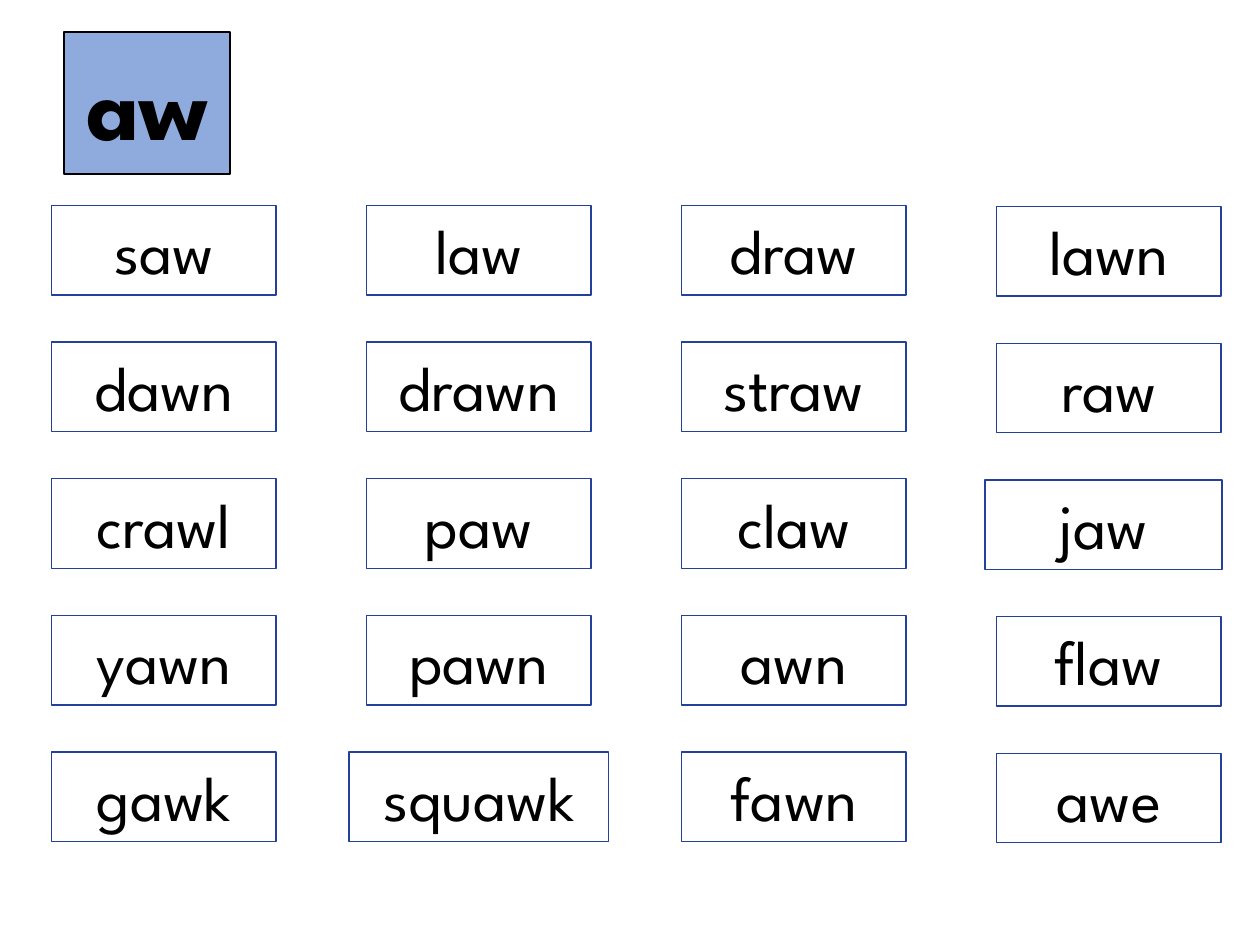
from pptx import Presentation
from pptx.dml.color import RGBColor
from pptx.enum.text import MSO_ANCHOR, MSO_AUTO_SIZE, PP_ALIGN
from pptx.util import Pt

CENTER = PP_ALIGN.CENTER
TOP, MIDDLE = MSO_ANCHOR.TOP, MSO_ANCHOR.MIDDLE
GROW, FIXED = MSO_AUTO_SIZE.SHAPE_TO_FIT_TEXT, MSO_AUTO_SIZE.NONE
TITLE_ONLY = 5


class Theme:
    ink = RGBColor(0x00, 0x00, 0x00)
    blue = RGBColor(0x22, 0x40, 0x9C)
    tile = RGBColor(0x8F, 0xAA, 0xDC)
    word = {"name": "League Spartan", "size": Pt(36), "bold": False}
    head = {"name": "League Spartan", "size": Pt(54), "bold": True}


# One tuple per column, read downwards
WORDS = [
    ("saw", "dawn", "crawl", "yawn", "gawk"),
    ("law", "drawn", "paw", "pawn", "squawk"),
    ("draw", "straw", "claw", "awn", "fawn"),
    ("lawn", "raw", "jaw", "flaw", "awe"),
]
# Wider cards: extra width, and the share of it that goes to the left
WIDE = {"squawk": (20.16, 0.5), "jaw": (7.2, 0.93)}
DROP = 0.72  # the last column sits slightly lower


def set_all(item, values):
    for key, value in values.items():
        setattr(item, key, value)


def write(shape, text, font, line, width, frame):
    """Outline a shape and set one centred line of text in it."""
    shape.line.color.rgb = line
    shape.line.width = Pt(width)
    set_all(shape.text_frame, {"word_wrap": True, **frame})
    para = shape.text_frame.paragraphs[0]
    para.alignment = CENTER
    run = para.add_run()
    run.text = text
    set_all(run.font, font)
    run.font.color.rgb = Theme.ink


def add_head(slide, text, left, top, width, height):
    """Place the sound being taught in a filled title tile."""
    title = slide.shapes.title
    set_all(title, {"left": Pt(left), "top": Pt(top),
                    "width": Pt(width), "height": Pt(height)})
    title.fill.solid()
    title.fill.fore_color.rgb = Theme.tile
    write(title, text, Theme.head, Theme.ink, 1,
          {"vertical_anchor": MIDDLE, "auto_size": FIXED})


def add_cards(slide, words, left, top, width, height):
    """Spread word cards evenly over the given box."""
    wide, high = 128.16, 51.12
    step_x = (width - wide) / (len(words) - 1)
    step_y = (height - high) / (len(words[0]) - 1)
    for col, column in enumerate(words):
        drop = DROP if col == len(words) - 1 else 0
        for row, word in enumerate(column):
            extra, share = WIDE.get(word, (0, 0))
            card = slide.shapes.add_textbox(
                Pt(left + col * step_x - extra * share),
                Pt(top + row * step_y + drop),
                Pt(wide + extra), Pt(high))
            write(card, word, Theme.word, Theme.blue, 0.75,
                  {"vertical_anchor": TOP, "auto_size": GROW})


def main():
    deck = Presentation()
    deck.slide_width, deck.slide_height = Pt(720), Pt(540)
    slide = deck.slides.add_slide(deck.slide_layouts[TITLE_ONLY])
    add_head(slide, "aw", 36.6, 18.2, 95, 81.2)
    add_cards(slide, WORDS, 29.6, 117.4, 668.16, 363.5)
    deck.save("out.pptx")


if __name__ == "__main__":
    main()
